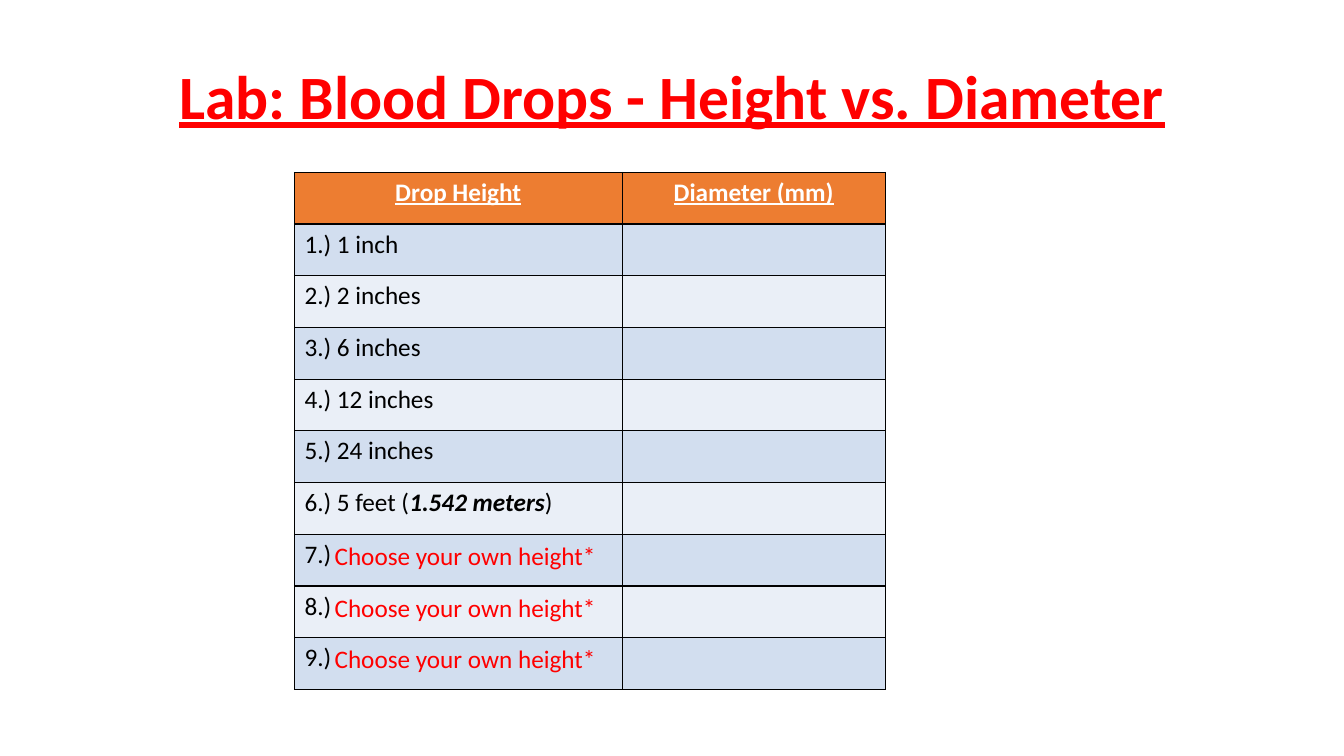
from lxml import etree
from pptx import Presentation
from pptx.dml.color import RGBColor
from pptx.enum import text
from pptx.oxml import ns
from pptx.util import Inches, Pt

COLORS = {
    "red": "FF0000",
    "black": "000000",
    "white": "FFFFFF",
    "header": "ED7D31",
    "odd_row": "D2DEEF",
    "even_row": "EAEFF7",
}
FONT = "Calibri"
HEADINGS = ["Drop Height", "Diameter (mm)"]
# Each height is a list of text pieces; every second piece is emphasized
HEIGHTS = [
    ["1 inch"], ["2 inches"], ["6 inches"], ["12 inches"], ["24 inches"],
    ["5 feet (", "1.542 meters", ")"],
]
OWN_HEIGHT = "Choose your own height*"
OWN_COUNT = 3
COLUMN_WIDTHS = [3.25, 2.61]
ROW_HEIGHT = 0.513


def style_run(run, size, color, bold=False, italic=False, underline=False):
    font = run.font
    font.name, font.size = FONT, Pt(size)
    font.bold, font.italic, font.underline = bold, italic, underline
    font.color.rgb = RGBColor.from_string(COLORS[color])


def add_title(slide, left, top, width, height):
    title = slide.shapes.add_textbox(
        Inches(left), Inches(top), Inches(width), Inches(height)).text_frame
    title.word_wrap = True
    title.vertical_anchor = text.MSO_ANCHOR.MIDDLE
    title.text = "Lab: Blood Drops - Height vs. Diameter"
    line = title.paragraphs[0]
    line.alignment = text.PP_ALIGN.CENTER
    line.line_spacing = 0.9
    style_run(line.runs[0], 44, "red", bold=True, underline=True)


def paint_cell(cell, fill):
    # Borders come before the fill in the cell properties
    properties = cell._tc.get_or_add_tcPr()
    for side in ("a:lnL", "a:lnR", "a:lnT", "a:lnB"):
        border = etree.SubElement(properties, ns.qn(side), w=str(Pt(1)))
        solid = etree.SubElement(border, ns.qn("a:solidFill"))
        etree.SubElement(solid, ns.qn("a:srgbClr"), val=COLORS["black"])
    cell.fill.solid()
    cell.fill.fore_color.rgb = RGBColor.from_string(COLORS[fill])


def add_measurements(slide, left, top):
    row_count = 1 + len(HEIGHTS) + OWN_COUNT
    table = slide.shapes.add_table(
        row_count, len(COLUMN_WIDTHS), Inches(left), Inches(top),
        Inches(sum(COLUMN_WIDTHS)), Inches(ROW_HEIGHT * row_count)).table
    for column, width in zip(table.columns, COLUMN_WIDTHS):
        column.width = Inches(width)

    # Fills and borders
    for number, row in enumerate(table.rows):
        fill = "header" if number == 0 else "odd_row" if number % 2 else "even_row"
        for cell in row.cells:
            paint_cell(cell, fill)

    # Headings
    for cell, heading in zip(table.rows[0].cells, HEADINGS):
        cell.text = heading
        line = cell.text_frame.paragraphs[0]
        line.alignment = text.PP_ALIGN.CENTER
        style_run(line.runs[0], 18, "white", bold=True, underline=True)

    # Numbered drop heights
    for number, pieces in enumerate(HEIGHTS + [[]] * OWN_COUNT, start=1):
        line = table.cell(number, 0).text_frame.paragraphs[0]
        label = f"{number}.) {pieces[0]}" if pieces else f"{number}.)"
        for index, piece in enumerate([label] + pieces[1:]):
            run = line.add_run()
            run.text = piece
            emphasized = index % 2 == 1
            style_run(run, 18, "black", bold=emphasized, italic=emphasized)


def add_own_height(slide, left, top, width, height):
    choice = slide.shapes.add_textbox(
        Inches(left), Inches(top), Inches(width), Inches(height)).text_frame
    choice.word_wrap = False
    choice.auto_size = text.MSO_AUTO_SIZE.SHAPE_TO_FIT_TEXT
    choice.text = OWN_HEIGHT
    style_run(choice.paragraphs[0].runs[0], 18, "red")


def main():
    deck = Presentation()
    deck.slide_width, deck.slide_height = Inches(13.33), Inches(7.5)
    slide = deck.slides.add_slide(deck.slide_layouts[6])
    add_title(slide, 0.92, 0.26, 11.5, 1.45)
    table_left, table_top = 2.92, 1.71
    add_measurements(slide, table_left, table_top)
    # Prompts over the last rows
    for number in range(OWN_COUNT):
        row_top = table_top + ROW_HEIGHT * (1 + len(HEIGHTS) + number)
        add_own_height(slide, table_left + 0.3, row_top + 0.01, 2.82, 0.4)
    deck.save("out.pptx")


if __name__ == "__main__":
    main()
